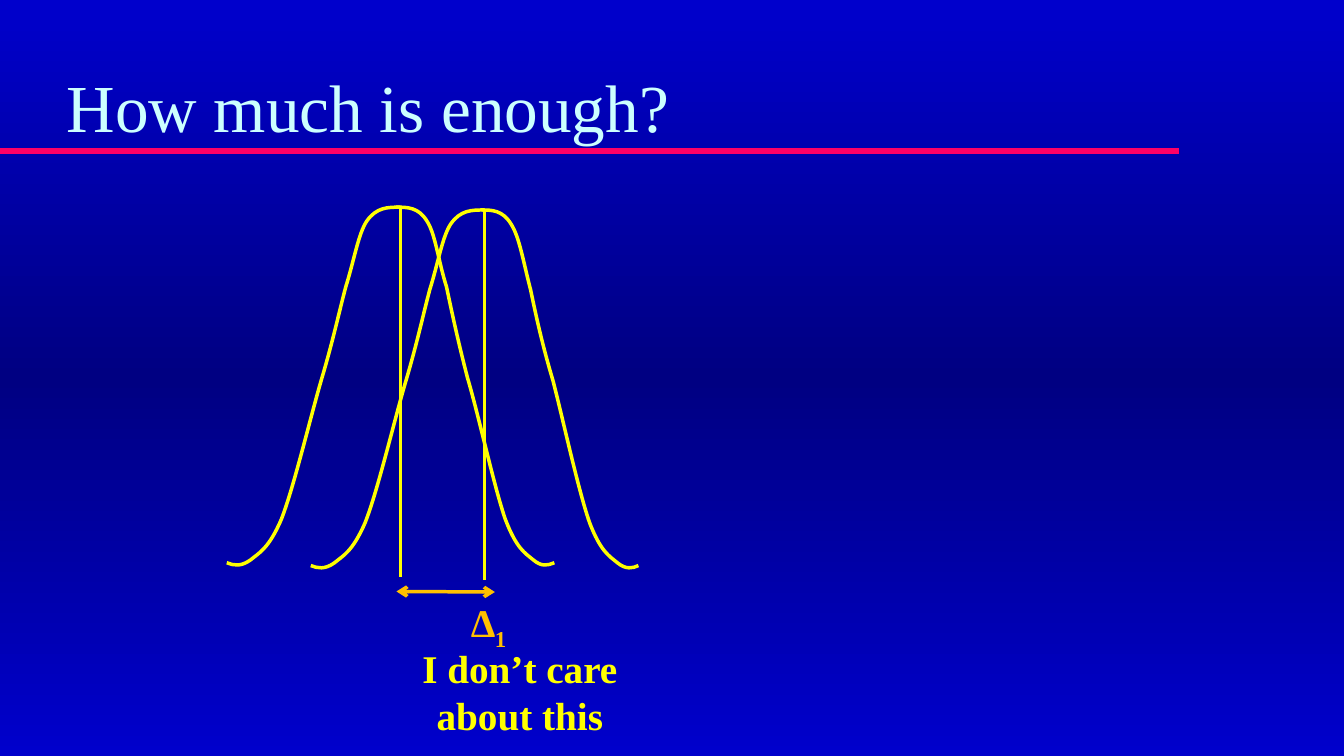
import copy

import lxml.etree
import pptx
import pptx.dml.color
import pptx.enum.text
import pptx.oxml.ns
import pptx.util

Pt = pptx.util.Pt
ALIGN = pptx.enum.text.PP_ALIGN
ANCHOR = pptx.enum.text.MSO_ANCHOR
AUTO = pptx.enum.text.MSO_AUTO_SIZE
qn = pptx.oxml.ns.qn

YELLOW, ORANGE = "FFFF00", "FFC000"
LABEL = {"name": "Times New Roman", "size": Pt(28), "bold": True}
PEAK_X, PEAK_Y, FOOT_Y = 286, 147.6, 412
LEFT_FOOT, RIGHT_FOOT, FLANK_RATIO = 162, 396, 0.91
SHIFT = (60.2, 2)

# Bezier points of the rising flank: start, then two controls and an end each
FLANK = [
    (162, 401.8), (167, 403.9), (172.1, 405.4), (178.6, 400.3),
    (185, 394.6), (192.2, 392.4), (200.9, 370.8),
    (209.5, 348.5), (221.8, 297.4), (229.7, 270),
    (237.6, 242.6), (241.9, 223.9), (247, 205.2),
    (252.7, 186.5), (255.6, 167), (262.1, 157.7),
    (268.6, 148.3), (277.2, 148.3), (285.8, 147.6),
]


def rgb(value):
    return pptx.dml.color.RGBColor.from_string(value)


def set_background(s, colours):
    fill = s.background.fill
    fill.gradient()
    fill.gradient_angle = 270
    stops = s.element.find(".//" + qn("a:gsLst"))
    stops.append(copy.deepcopy(stops[0]))
    for i, (stop, colour) in enumerate(zip(fill.gradient_stops, colours)):
        stop.position = i / (len(colours) - 1)
        stop.color.rgb = rgb(colour)


def add_line(shapes, start, end, colour, width=2.5, arrows=False):
    line = shapes.add_connector(1, *[Pt(v) for v in (*start, *end)])
    line.line.color.rgb = rgb(colour)
    line.line.width = Pt(width)
    properties = line.element.spPr
    if arrows:
        for tag in ("a:headEnd", "a:tailEnd"):
            lxml.etree.SubElement(properties.find(qn("a:ln")), qn(tag),
                                  type="arrow")
    lxml.etree.SubElement(properties, qn("a:effectLst"))
    return line


def add_curve(shapes, points):
    builder = shapes.build_freeform(*points[0], scale=Pt(1))
    builder.add_line_segments(points[1:], close=False)
    sp = builder.convert_to_shape()
    sp.shadow.inherit = False
    sp.fill.background()
    sp.line.color.rgb = rgb(YELLOW)
    sp.line.width = Pt(2.5)

    # Join every three points into one Bezier segment
    path = sp.element.find(".//" + qn("a:path"))
    segments = path.findall(qn("a:lnTo"))
    for i in range(0, len(segments), 3):
        bezier = lxml.etree.SubElement(path, qn("a:cubicBezTo"))
        for segment in segments[i:i + 3]:
            bezier.append(segment[0])
            path.remove(segment)


def add_bell(s, dx, dy):
    shapes = s.shapes.add_group_shape().shapes
    rising = [(x + dx, y + dy) for x, y in FLANK]
    falling = [(RIGHT_FOOT - (x - LEFT_FOOT) * FLANK_RATIO + dx, y + dy)
               for x, y in FLANK]
    add_curve(shapes, rising)
    add_curve(shapes, falling)
    add_line(shapes, (PEAK_X + dx, PEAK_Y + dy), (PEAK_X + dx, FOOT_Y + dy),
             YELLOW)


def add_run(p, text, colour, fmt):
    r = p.add_run()
    r.text = text
    for key, value in fmt.items():
        setattr(r.font, key, value)
    r.font.color.rgb = rgb(colour)
    return r


def place_title(s, text):
    sp = s.shapes.title
    box = {"left": 40.3, "top": 20.9, "width": 815.8, "height": 87.1}
    for key, value in box.items():
        setattr(sp, key, Pt(value))
    tf = sp.text_frame
    tf.vertical_anchor = ANCHOR.BOTTOM
    tf.auto_size = AUTO.NONE
    p = tf.paragraphs[0]
    p.alignment = ALIGN.LEFT
    add_run(p, text, "CCFFFF", {"name": "Times New Roman", "size": Pt(48)})


def add_label(s, box, text, colour, align, subscript=""):
    sp = s.shapes.add_textbox(*[Pt(v) for v in box])
    tf = sp.text_frame
    tf.word_wrap = True
    tf.auto_size = AUTO.SHAPE_TO_FIT_TEXT
    tf.margin_left = tf.margin_right = Pt(6.5)
    p = tf.paragraphs[0]
    p.alignment = align
    add_run(p, text, colour, LABEL)
    if subscript:
        r = add_run(p, subscript, colour, LABEL)
        r._r.get_or_add_rPr().set("baseline", "-25000")


def main():
    prs = pptx.Presentation()
    prs.slide_width, prs.slide_height = Pt(960), Pt(540)
    s = prs.slides.add_slide(prs.slide_layouts[5])
    set_background(s, ["0000CC", "000082", "0000CC"])

    # Title above its rule
    place_title(s, "How much is enough?")
    rule = add_line(s.shapes, (0, 108), (842.4, 108), "FF0066", 4)
    s.shapes.title.element.addprevious(rule.element)

    # Two bell curves with their centre lines
    add_bell(s, 0, 0)
    add_bell(s, *SHIFT)

    # Distance between the centres
    add_line(s.shapes, (283.2, 422.5), (353.5, 422.9), ORANGE, arrows=True)
    add_label(s, (274.8, 456.5, 193, 75), "I don’t care about this", YELLOW,
              ALIGN.CENTER)
    add_label(s, (330, 424, 53.3, 64.8), "∆", ORANGE, ALIGN.LEFT, "1")

    prs.save("out.pptx")


if __name__ == "__main__":
    main()
